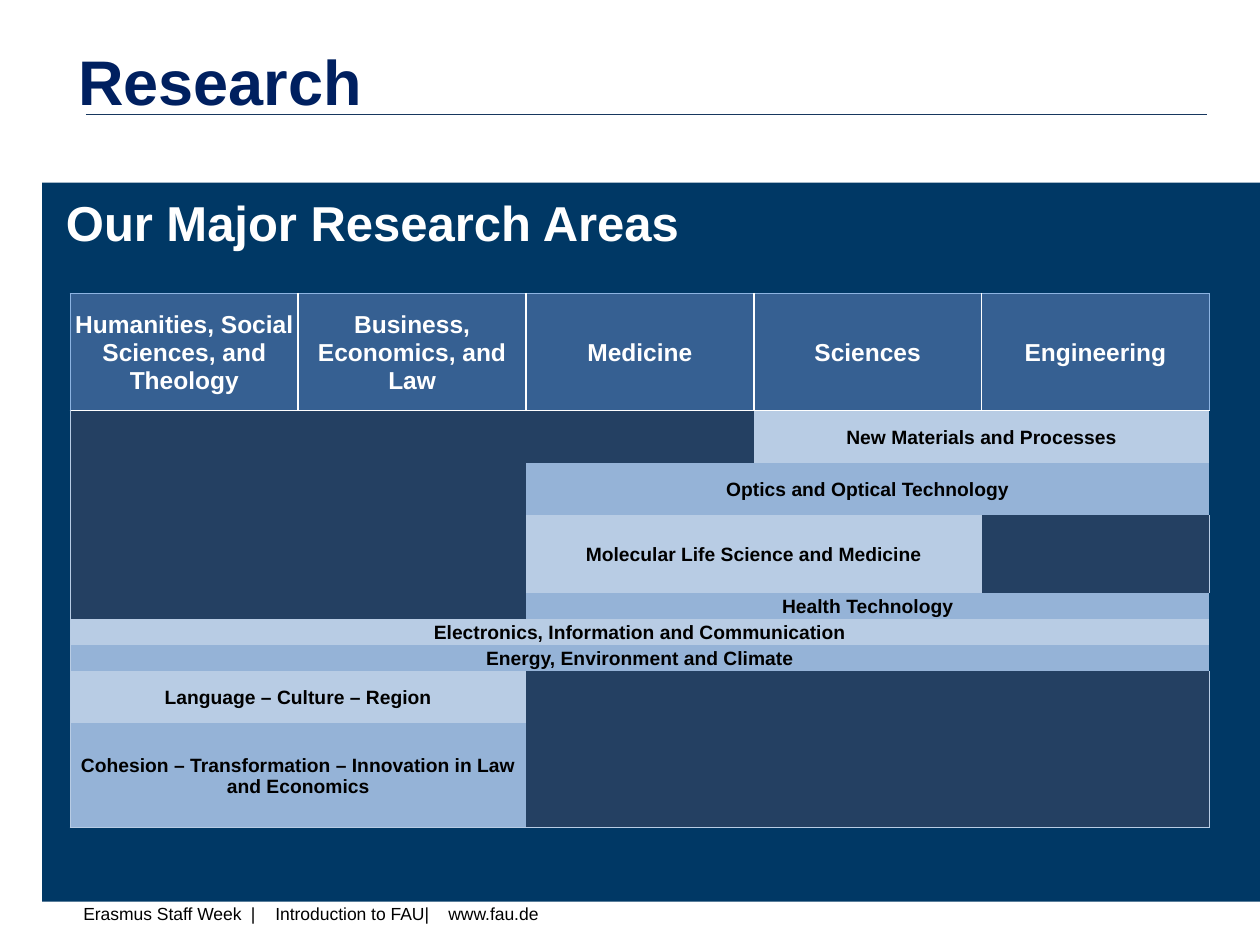
from lxml import etree
from pptx import Presentation
from pptx.dml.color import RGBColor
from pptx.enum.shapes import MSO_CONNECTOR, MSO_SHAPE
from pptx.enum.text import MSO_ANCHOR, MSO_AUTO_SIZE, PP_ALIGN
from pptx.oxml.ns import qn
from pptx.util import Cm, Pt

STRAIGHT, RECTANGLE = MSO_CONNECTOR.STRAIGHT, MSO_SHAPE.RECTANGLE
TOP, MIDDLE = MSO_ANCHOR.TOP, MSO_ANCHOR.MIDDLE
LEFT, CENTER = PP_ALIGN.LEFT, PP_ALIGN.CENTER
GROW, FIXED = MSO_AUTO_SIZE.SHAPE_TO_FIT_TEXT, MSO_AUTO_SIZE.NONE

FONT = "Arial"
COLORS = {
    "white": "FFFFFF", "black": "000000", "heading": "002060", "rule": "17375E",
    "panel": "003865", "header": "366092", "header_edge": "8DB4E2",
    "empty": "244062", "light": "B8CCE4", "mid": "95B3D7",
}
NO_STYLE_NO_GRID = "{2D5ABB26-0587-4C30-8999-92F81FD0307C}"

FACULTIES = ["Humanities, Social Sciences, and Theology", "Business, Economics, and Law",
             "Medicine", "Sciences", "Engineering"]
# Research area, first faculty, number of faculties, row height in units
AREAS = [
    ("New Materials and Processes", 3, 2, 2),
    ("Optics and Optical Technology", 2, 3, 2),
    ("Molecular Life Science and Medicine", 2, 2, 3),
    ("Health Technology", 2, 3, 1),
    ("Electronics, Information and Communication", 0, 5, 1),
    ("Energy, Environment and Climate", 0, 5, 1),
    ("Language – Culture – Region", 0, 2, 2),
    ("Cohesion – Transformation – Innovation in Law and Economics", 0, 2, 4),
]


def rgb(name):
    return RGBColor.from_string(COLORS[name])


def style_text(para, size, color, bold=False, align=LEFT):
    para.alignment = align
    for span in para.runs:
        span.font.name, span.font.size, span.font.bold = FONT, Pt(size), bold
        span.font.color.rgb = rgb(color)


def add_header(page, left, top, width, height):
    # Thin rule under the heading
    rule_y = top + Cm(1.57)
    rule = page.shapes.add_connector(STRAIGHT, left + Cm(0.4), rule_y, left + width, rule_y)
    rule.line.color.rgb = rgb("rule")
    rule.line.width = Pt(0.75)
    etree.SubElement(rule._element.spPr, qn("a:effectLst"))

    # Heading
    box = page.shapes.add_textbox(left, top, Cm(6.27), height)
    frame = box.text_frame
    frame.word_wrap = False
    frame.auto_size = GROW
    frame.text = "Research"
    style_text(frame.paragraphs[0], 36, "heading", bold=True)


def add_panel(page, left, top, width, height):
    # Dark background
    panel = page.shapes.add_shape(RECTANGLE, left, top, width, height)
    panel.shadow.inherit = False
    panel.fill.solid()
    panel.fill.fore_color.rgb = rgb("panel")
    panel.line.fill.background()

    # Slide title, brought in front of the panel
    title = page.shapes.title
    title.left, title.top = left + Cm(0.48), top + Cm(0.2)
    title.width, title.height = Cm(21.56), Cm(6.45)
    frame = title.text_frame
    frame.margin_left = frame.margin_top = frame.margin_right = frame.margin_bottom = 0
    frame.vertical_anchor = TOP
    frame.word_wrap = True
    frame.auto_size = FIXED
    frame.text = "Our Major Research Areas"
    style_text(frame.paragraphs[0], 28, "white", bold=True)
    panel._element.addnext(title._element)


def set_borders(cell, borders):
    """Draw the given sides and leave the others without a line."""
    for side in "LRTB":
        line = etree.SubElement(cell._tc.get_or_add_tcPr(), qn(f"a:ln{side}"), w=str(Pt(1)))
        if side in borders:
            fill = etree.SubElement(line, qn("a:solidFill"))
            etree.SubElement(fill, qn("a:srgbClr"), val=COLORS[borders[side]])
        else:
            etree.SubElement(line, qn("a:noFill"))


def cell_borders(row, col, last_row, last_col):
    """Return the colour of each visible side."""
    edge = "light" if row else "header_edge"
    borders = {}
    if col == 0 or row == 0:
        borders["L"] = "white" if col else edge
    if col == last_col or row == 0:
        borders["R"] = edge if col == last_col else "white"
    if row <= 1:
        borders["T"] = "white" if row else edge
    if row in (0, last_row):
        borders["B"] = "light" if row else "white"
    return borders


def fill_cell(cell, text, fill, size, color):
    cell.fill.solid()
    cell.fill.fore_color.rgb = rgb(fill)
    cell.margin_left = cell.margin_top = cell.margin_right = Cm(0.03)
    cell.margin_bottom = 0
    cell.vertical_anchor = MIDDLE
    cell.text_frame.text = text
    para = cell.text_frame.paragraphs[0]
    style_text(para, size, color, bold=True, align=CENTER)
    if not text:
        # Keep empty cells from stretching the low rows
        para._p.get_or_add_endParaRPr().set("sz", str(size * 100))


def add_area_table(page, left, top, width, height):
    row_count, col_count = len(AREAS) + 1, len(FACULTIES)
    frame = page.shapes.add_table(row_count, col_count, left, top, width, height)
    table = frame.table
    table._tbl.tblPr.find(qn("a:tableStyleId")).text = NO_STYLE_NO_GRID
    table.horz_banding = False

    # Row and column sizes
    for column in table.columns:
        column.width = width // col_count
    header_height = Cm(2.36)
    unit = (height - header_height) / sum(area[3] for area in AREAS)
    table.rows[0].height = header_height
    for row, area in enumerate(AREAS, 1):
        table.rows[row].height = int(unit * area[3])

    # Borders come before fills in each cell
    for row in range(row_count):
        for col in range(col_count):
            set_borders(table.cell(row, col),
                        cell_borders(row, col, row_count - 1, col_count - 1))

    # Faculties
    for col, faculty in enumerate(FACULTIES):
        fill_cell(table.cell(0, col), faculty, "header", 14, "white")

    # Research areas spanning their faculties
    for row, (area, first, count, _) in enumerate(AREAS, 1):
        band = "light" if row % 2 else "mid"
        for col in range(col_count):
            inside = first <= col < first + count
            fill_cell(table.cell(row, col), area if col == first else "",
                      band if inside else "empty", 11, "black")
        table.cell(row, first).merge(table.cell(row, first + count - 1))


def add_footer(page, left, top, width, height):
    box = page.shapes.add_textbox(left, top, width, height)
    frame = box.text_frame
    frame.word_wrap = True
    frame.auto_size = GROW
    frame.text = "Erasmus Staff Week\t|\tIntroduction to FAU|\twww.fau.de"
    para = frame.paragraphs[0]
    style_text(para, 10, "black")
    tabs = etree.SubElement(para._p.get_or_add_pPr(), qn("a:tabLst"))
    for stop in (3.38, 3.87, 7.36):
        etree.SubElement(tabs, qn("a:tab"), pos=str(Cm(stop)), algn="l")


def main():
    deck = Presentation()
    deck.slide_width, deck.slide_height = Cm(25.4), Cm(19.05)
    page = deck.slides.add_slide(deck.slide_layouts[5])
    add_header(page, Cm(1.33), Cm(0.74), Cm(23.01), Cm(1.8))
    add_panel(page, Cm(0.85), Cm(3.68), Cm(24.55), Cm(14.5))
    add_area_table(page, Cm(1.42), Cm(5.92), Cm(22.96), Cm(10.77))
    add_footer(page, Cm(1.43), Cm(18.07), Cm(15.04), Cm(0.69))
    deck.save("out.pptx")


if __name__ == "__main__":
    main()
